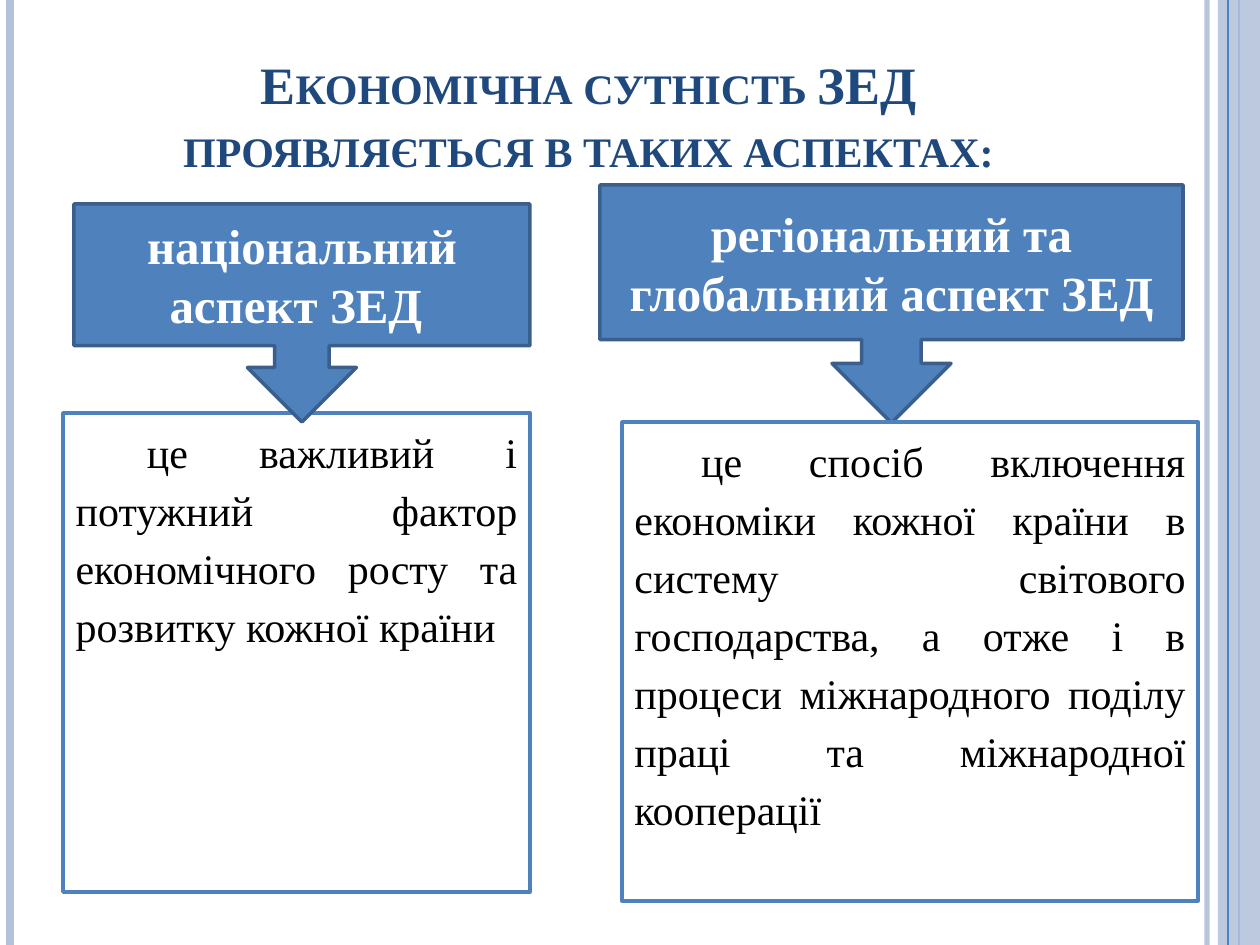
from dataclasses import dataclass

from pptx import Presentation
from pptx.dml.color import RGBColor
from pptx.enum.shapes import MSO_CONNECTOR, MSO_SHAPE
from pptx.enum.text import MSO_ANCHOR, MSO_AUTO_SIZE, PP_ALIGN
from pptx.oxml.ns import qn
from pptx.util import Emu, Pt
from lxml import etree

STRAIGHT = MSO_CONNECTOR.STRAIGHT
RECTANGLE = MSO_SHAPE.RECTANGLE
CALLOUT = MSO_SHAPE.DOWN_ARROW_CALLOUT
TOP, MIDDLE, BOTTOM = MSO_ANCHOR.TOP, MSO_ANCHOR.MIDDLE, MSO_ANCHOR.BOTTOM
CENTER, JUSTIFY = PP_ALIGN.CENTER, PP_ALIGN.JUSTIFY
NO_AUTOFIT = MSO_AUTO_SIZE.NONE

EMU_PER_PX = 914400 / 126
PAGE_WIDTH, PAGE_HEIGHT = 1260, 945
FONT = "Times New Roman"
BLUE, DARK_BLUE, PALE_BLUE = "4F81BD", "3A5F8C", "B3C1DB"
NAVY, BLACK, WHITE = "1F497D", "000000", "FFFFFF"


@dataclass
class Area:
    left: int
    top: int
    width: int
    height: int


@dataclass
class Stripe:
    x: int
    color: str
    weight: float
    opacity: int = 100


@dataclass
class Aspect:
    heading: str
    heading_area: Area
    meaning: str
    meaning_area: Area


STRIPES = [
    Stripe(1207, PALE_BLUE, 3, 93),
    Stripe(10, PALE_BLUE, 4.5),
    Stripe(1239, BLUE, 1.5),
    Stripe(1228, BLUE, 0.75),
]
BAND = Area(1218, 0, 42, PAGE_HEIGHT)
TITLE = "Економічна сутність ЗЕД проявляється в таких аспектах:"
TITLE_AREA = Area(74, 26, 1029, 158)
NATIONAL = Aspect(
    "національний аспект ЗЕД ", Area(74, 204, 456, 218),
    " це важливий і потужний фактор економічного росту та розвитку кожної країни ",
    Area(63, 413, 467, 479),
)
GLOBAL = Aspect(
    "регіональний та глобальний аспект ЗЕД", Area(600, 185, 583, 238),
    " це спосіб включення економіки кожної країни в систему світового господарства, "
    "а отже і в процеси міжнародного поділу праці та міжнародної кооперації",
    Area(622, 422, 576, 479),
)


def px(length: int) -> Emu:
    return Emu(round(length * EMU_PER_PX))


def rgb(color: str) -> RGBColor:
    return RGBColor.from_string(color)


def set_opacity(shape, percent: int) -> None:
    for color in shape._element.spPr.iter(qn("a:srgbClr")):
        etree.SubElement(color, qn("a:alpha"), val=str(percent * 1000))


def place(shape, area: Area) -> None:
    shape.left, shape.top = px(area.left), px(area.top)
    shape.width, shape.height = px(area.width), px(area.height)


def paint(shape, fill: str, line: str) -> None:
    shape.fill.solid()
    shape.fill.fore_color.rgb = rgb(fill)
    shape.line.color.rgb = rgb(line)
    shape.line.width = Pt(2)


def write(shape, text: str, *, size: int, color: str, align, anchor,
          bold: bool = False, small_caps: bool = False, spacing: float = 1.0) -> None:
    frame = shape.text_frame
    frame.word_wrap = True
    frame.auto_size = NO_AUTOFIT
    frame.vertical_anchor = anchor
    para = frame.paragraphs[0]
    para.alignment = align
    para.line_spacing = spacing
    para.space_before = Pt(0)
    span = para.add_run()
    span.text = text
    span.font.name, span.font.size, span.font.bold = FONT, Pt(size), bold
    span.font.color.rgb = rgb(color)
    if small_caps:
        span.font._element.set("cap", "small")


def add_shape(page, kind, area: Area):
    shape = page.shapes.add_shape(kind, 0, 0, 0, 0)
    place(shape, area)
    shape.shadow.inherit = False
    return shape


def draw_stripe(page, stripe: Stripe) -> None:
    x = px(stripe.x)
    line = page.shapes.add_connector(STRAIGHT, x, 0, x, px(PAGE_HEIGHT))
    line.line.color.rgb = rgb(stripe.color)
    line.line.width = Pt(stripe.weight)
    if stripe.opacity < 100:
        set_opacity(line, stripe.opacity)
    etree.SubElement(line._element.spPr, qn("a:effectLst"))


def draw_heading(page, aspect: Aspect) -> None:
    callout = add_shape(page, CALLOUT, aspect.heading_area)
    paint(callout, BLUE, DARK_BLUE)
    write(callout, aspect.heading, size=28, color=WHITE, align=CENTER,
          anchor=MIDDLE, bold=True)


def fill_meaning(box, aspect: Aspect) -> None:
    paint(box, WHITE, BLUE)
    write(box, aspect.meaning, size=24, color=BLACK, align=JUSTIFY,
          anchor=TOP, spacing=1.15)


def main() -> None:
    deck = Presentation()
    deck.slide_width, deck.slide_height = px(PAGE_WIDTH), px(PAGE_HEIGHT)
    page = deck.slides.add_slide(deck.slide_layouts[1])

    # Side decoration
    for stripe in STRIPES[:3]:
        draw_stripe(page, stripe)
    band = add_shape(page, RECTANGLE, BAND)
    paint(band, PALE_BLUE, PALE_BLUE)
    band.line.fill.background()
    set_opacity(band, 87)
    draw_stripe(page, STRIPES[3])

    # Title
    title = page.shapes.title
    place(title, TITLE_AREA)
    write(title, TITLE, size=30, color=NAVY, align=CENTER, anchor=BOTTOM,
          bold=True, small_caps=True)

    # National aspect, in the body placeholder without its bullet
    body = page.placeholders[1]
    place(body, NATIONAL.meaning_area)
    properties = body.text_frame.paragraphs[0]._p.get_or_add_pPr()
    properties.set("marL", "0")
    properties.set("indent", "0")
    etree.SubElement(properties, qn("a:buNone"))
    fill_meaning(body, NATIONAL)

    # Headings, then the global aspect over its arrow tip
    for aspect in (NATIONAL, GLOBAL):
        draw_heading(page, aspect)
    fill_meaning(add_shape(page, RECTANGLE, GLOBAL.meaning_area), GLOBAL)

    deck.save("out.pptx")


if __name__ == "__main__":
    main()
